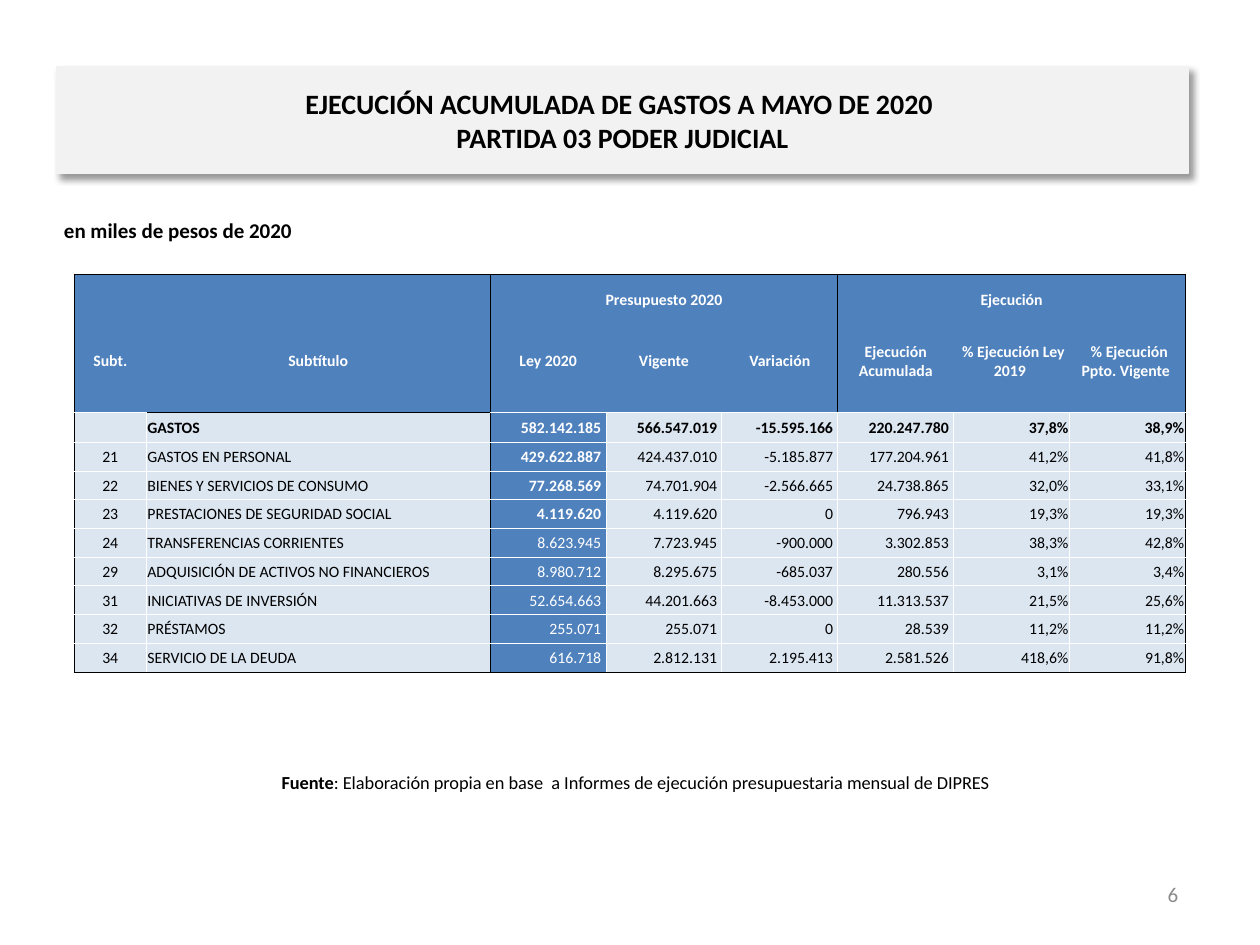
from dataclasses import dataclass

from lxml.etree import SubElement
from pptx import Presentation
from pptx.dml.color import RGBColor
from pptx.enum.shapes import MSO_SHAPE
from pptx.enum.text import MSO_ANCHOR, PP_ALIGN
from pptx.oxml.ns import qn
from pptx.util import Inches, Pt


@dataclass(frozen=True)
class Theme:
    font: str = "Calibri"
    black: str = "000000"
    white: str = "FFFFFF"
    gray: str = "8C8C8C"
    panel: str = "F2F2F2"
    blue: str = "4F81BD"
    pale: str = "DCE6F1"
    title: float = 16
    label: float = 12
    source: float = 10.5
    cell: float = 9
    plain: str = "{2D5ABB26-0587-4C30-8999-92F81FD0307C}"


LEFT, MID, RIGHT, FULL = (
    PP_ALIGN.LEFT, PP_ALIGN.CENTER, PP_ALIGN.RIGHT, PP_ALIGN.JUSTIFY)
COLS = [5.7, 27.3] + [9.2] * 6
ROWS = [2.8, 8.1, 2.4] + [2.28] * 8
GROUPS = {2: "Presupuesto 2020", 5: "Ejecución"}
HEADS = ["Subt.", "Subtítulo", "Ley 2020", "Vigente", "Variación",
         "Ejecución Acumulada", " % Ejecución Ley 2019 ",
         " % Ejecución Ppto. Vigente "]
DATA = [
    ["", "GASTOS", "582.142.185", "566.547.019", "-15.595.166",
     "220.247.780", "37,8%", "38,9%"],
    ["21", "GASTOS EN PERSONAL", "429.622.887", "424.437.010", "-5.185.877",
     "177.204.961", "41,2%", "41,8%"],
    ["22", "BIENES Y SERVICIOS DE CONSUMO", "77.268.569", "74.701.904",
     "-2.566.665", "24.738.865", "32,0%", "33,1%"],
    ["23", "PRESTACIONES DE SEGURIDAD SOCIAL", "4.119.620", "4.119.620", "0",
     "796.943", "19,3%", "19,3%"],
    ["24", "TRANSFERENCIAS CORRIENTES", "8.623.945", "7.723.945", "-900.000",
     "3.302.853", "38,3%", "42,8%"],
    ["29", "ADQUISICIÓN DE ACTIVOS NO FINANCIEROS", "8.980.712", "8.295.675",
     "-685.037", "280.556", "3,1%", "3,4%"],
    ["31", "INICIATIVAS DE INVERSIÓN", "52.654.663", "44.201.663",
     "-8.453.000", "11.313.537", "21,5%", "25,6%"],
    ["32", "PRÉSTAMOS", "255.071", "255.071", "0", "28.539", "11,2%",
     "11,2%"],
    ["34", "SERVICIO DE LA DEUDA", "616.718", "2.812.131", "2.195.413",
     "2.581.526", "418,6%", "91,8%"],
]


class Deck:
    """Places elements on a grid of 100 columns and 75 rows."""

    def __init__(self, theme):
        self.theme = theme
        self.file = Presentation()
        self.file.slide_width, self.file.slide_height = Inches(10), Inches(7.5)
        self.slide = self.file.slides.add_slide(self.file.slide_layouts[6])

    def grid(self, *units):
        return [Inches(unit / 10) for unit in units]

    def style(self, run, size, color, bold):
        font = run.font
        font.name, font.size, font.bold = self.theme.font, Pt(size), bold
        font.color.rgb = RGBColor.from_string(color)

    def label(self, frame, text, size, color, bold=False, align=LEFT):
        para = frame.paragraphs[0]
        para.text, para.alignment = text, align
        for run in para.runs:
            self.style(run, size, color, bold)
        return para

    def text(self, box, text, size, color, bold=False, align=LEFT,
             anchor=MSO_ANCHOR.MIDDLE):
        frame = self.slide.shapes.add_textbox(*self.grid(*box)).text_frame
        frame.word_wrap, frame.vertical_anchor = True, anchor
        return self.label(frame, text, size, color, bold, align)

    def banner(self, box, text):
        look = self.theme
        shape = self.slide.shapes.add_shape(
            MSO_SHAPE.RECTANGLE, *self.grid(*box))
        shape.fill.solid()
        shape.fill.fore_color.rgb = RGBColor.from_string(look.panel)
        shape.line.color.rgb = RGBColor.from_string(look.panel)
        shape.line.width = Pt(0.75)
        shape.shadow.inherit = False
        glow = SubElement(
            shape.element.spPr.find(qn("a:effectLst")), qn("a:outerShdw"),
            blurRad=str(Pt(4)), dist=str(Pt(3)), dir="2700000",
            algn="tl", rotWithShape="0")
        tint = SubElement(glow, qn("a:srgbClr"), val=look.black)
        SubElement(tint, qn("a:alpha"), val="40000")
        frame = shape.text_frame
        frame.word_wrap, frame.vertical_anchor = True, MSO_ANCHOR.MIDDLE
        self.label(frame, text, look.title, look.black, True, MID)

    def edge(self, cell, side, color):
        line = SubElement(cell._tc.get_or_add_tcPr(), qn(f"a:ln{side}"),
                          w=str(Pt(0.5)))
        if color:
            fill = SubElement(line, qn("a:solidFill"))
            SubElement(fill, qn("a:srgbClr"), val=color)
        else:
            SubElement(line, qn("a:noFill"))

    def frame(self, cell, row, col):
        """Black lines around the blocks, white ones between body cells."""
        look, head = self.theme, row < 2
        last = col + max(cell.span_width, 1) - 1
        dark = {
            "L": col in (0, 2) or head and col == 5,
            "R": last in (1, 7) or head and last == 4,
            "T": row == 0 or (row, col) == (2, 1),
            "B": row == len(ROWS) - 1 or (row, col) == (1, 1),
        }
        for side, black in dark.items():
            light = not head or (row == 1 and side == "B")
            self.edge(cell, side,
                      look.black if black else look.white if light else None)

    def cell(self, cell, row, col, text):
        look, head, total = self.theme, row < 2, row == 2
        self.frame(cell, row, col)
        blue = head or col == 2
        cell.fill.solid()
        cell.fill.fore_color.rgb = RGBColor.from_string(
            look.blue if blue else look.pale)
        cell.margin_left = cell.margin_right = cell.margin_top = Inches(0.01)
        cell.margin_bottom = 0
        cell.vertical_anchor = (
            MSO_ANCHOR.BOTTOM if row == 0 else MSO_ANCHOR.MIDDLE)
        if head or col == 0:
            align = MID
        elif col == 1:
            align = LEFT if total else FULL
        else:
            align = RIGHT
        bold = head or total or (col == 2 and row < 6)
        para = self.label(cell.text_frame, text, look.cell,
                          look.white if blue else look.black, bold, align)
        if not text:
            SubElement(para._p, qn("a:endParaRPr"), sz=str(look.cell * 100))

    def table(self, left, top):
        box = self.grid(left, top, sum(COLS), sum(ROWS))
        table = self.slide.shapes.add_table(len(ROWS), len(COLS), *box).table
        table.first_row = table.horz_banding = False
        table._tbl.tblPr.find(qn("a:tableStyleId")).text = self.theme.plain
        for col, width in zip(table.columns, self.grid(*COLS)):
            col.width = width
        for row, height in zip(table.rows, self.grid(*ROWS)):
            row.height = height
        for col in GROUPS:
            table.cell(0, col).merge(table.cell(0, col + 2))
        groups = [GROUPS.get(col, "") for col in range(len(COLS))]
        body = [[f"{text} " if 2 <= col <= 5 else text
                 for col, text in enumerate(line)] for line in DATA]
        for row, line in enumerate([groups, HEADS, *body]):
            for col, text in enumerate(line):
                self.cell(table.cell(row, col), row, col, text)


def main():
    look = Theme()
    deck = Deck(look)
    source = deck.text((4.5, 60.1, 91.9, 4), "Fuente", look.source,
                       look.black, True, MID)
    rest = source.add_run()
    rest.text = (": Elaboración propia en base  a Informes de ejecución "
                 "presupuestaria mensual de DIPRES")
    deck.style(rest, look.source, look.black, False)
    deck.text((71.2, 69, 23.3, 4), "6", look.label, look.gray, align=RIGHT)
    deck.text((4.1, 16.8, 90, 5), "en miles de pesos de 2020", look.label,
              look.black, True, anchor=MSO_ANCHOR.TOP)
    deck.banner((4.5, 5.3, 89.8, 8.5),
                "EJECUCIÓN ACUMULADA DE GASTOS A MAYO DE 2020 \v"
                "PARTIDA 03 PODER JUDICIAL")
    deck.table(5.9, 21.8)
    deck.file.save("out.pptx")


if __name__ == "__main__":
    main()
